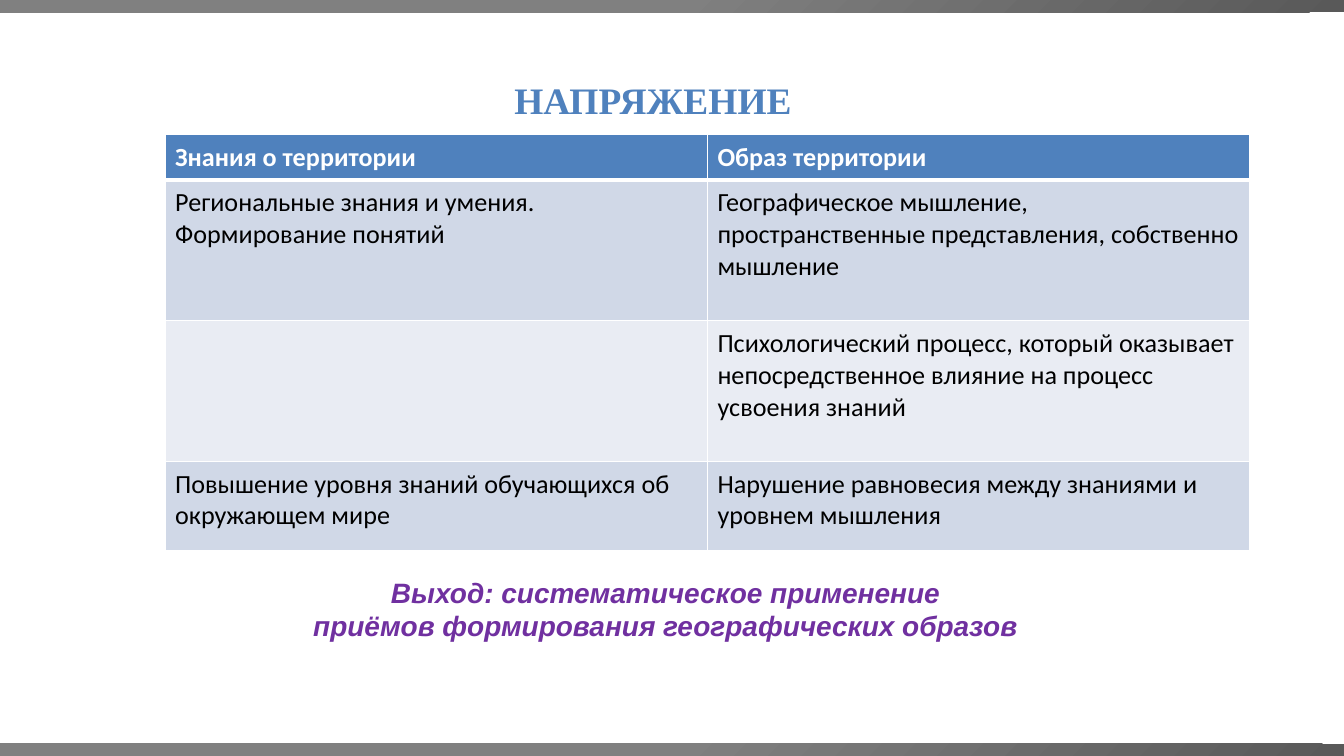
from lxml.etree import SubElement
from pptx import Presentation
from pptx.dml.color import RGBColor
from pptx.enum.shapes import MSO_SHAPE
from pptx.enum.text import MSO_ANCHOR, MSO_AUTO_SIZE, PP_ALIGN
from pptx.oxml.ns import qn
from pptx.util import Cm, Pt

WHITE = RGBColor(0xFF, 0xFF, 0xFF)
BLACK = RGBColor(0x00, 0x00, 0x00)
BLUE = RGBColor(0x4F, 0x81, 0xBD)
PURPLE = RGBColor(0x70, 0x30, 0xA0)
DARK_BAND = RGBColor(0xD0, 0xD8, 0xE7)
LIGHT_BAND = RGBColor(0xE9, 0xEC, 0xF3)
DARK_GREY = RGBColor(0x59, 0x59, 0x59)
GREY = RGBColor(0x80, 0x80, 0x80)

SLIDE_WIDTH, SLIDE_HEIGHT, STRIPE_HEIGHT = 25.4, 14.29, 0.23
THIN, THICK = 0.96, 3

TENSION_ROWS = [
    ("Знания о территории", "Образ территории"),
    ("Региональные знания и умения.\nФормирование понятий",
     "Географическое мышление, пространственные представления, "
     "собственно мышление"),
    ("", "Психологический процесс, который оказывает непосредственное "
     "влияние на процесс усвоения знаний"),
    ("Повышение уровня знаний обучающихся об окружающем мире",
     "Нарушение равновесия между знаниями и уровнем мышления"),
]
ROW_HEIGHTS = [0.79, 2.66, 2.66, 1.68]
ROW_FILLS = [BLUE, DARK_BAND, LIGHT_BAND, DARK_BAND]

HEADING_FONT = {"name": "Times New Roman", "size": Pt(20), "bold": True}
HEADER_FONT = {"name": "Calibri", "size": Pt(14), "bold": True}
BODY_FONT = {"name": "Calibri", "size": Pt(14), "bold": False}
OUTCOME_FONT = {"name": "Arial", "size": Pt(15), "bold": True, "italic": True}
HEADING_FRAME = {"word_wrap": False, "auto_size": MSO_AUTO_SIZE.NONE,
                 "vertical_anchor": MSO_ANCHOR.TOP,
                 "margin_left": Cm(0), "margin_right": Cm(0)}
CELL_MARGINS = {"margin_left": Cm(0.19), "margin_right": Cm(0.19),
                "margin_top": Cm(0.13), "margin_bottom": Cm(0.13)}


def set_attributes(target, values):
    for name, value in values.items():
        setattr(target, name, value)


def write_text(frame, text, font, color, align=PP_ALIGN.LEFT):
    frame.text = text
    for paragraph in frame.paragraphs:
        paragraph.alignment = align
        set_attributes(paragraph.font, font)
        paragraph.font.color.rgb = color


def set_borders(cell, widths):
    properties = cell._tc.get_or_add_tcPr()
    for position, (side, width) in enumerate(widths.items()):
        line = properties.makeelement(qn(f"a:{side}"), {"w": str(Pt(width))})
        fill = SubElement(line, qn("a:solidFill"))
        SubElement(fill, qn("a:srgbClr"), val=str(WHITE))
        properties.insert(position, line)


def add_stripe(slide, left, top, width, height):
    stripe = slide.shapes.add_shape(
        MSO_SHAPE.RECTANGLE, Cm(left), Cm(top), Cm(width), Cm(height))
    stripe.shadow.inherit = False
    stripe.line.fill.background()
    stripe.fill.gradient()
    stripe.fill.gradient_angle = 135
    stops = zip(stripe.fill.gradient_stops, [(0, DARK_GREY), (0.5, GREY)])
    for stop, (position, color) in stops:
        stop.position = position
        stop.color.rgb = color


def place_heading(slide, left, top, width, height):
    heading = slide.shapes.title
    set_attributes(heading, {"left": Cm(left), "top": Cm(top),
                             "width": Cm(width), "height": Cm(height)})
    set_attributes(heading.text_frame, HEADING_FRAME)
    write_text(heading.text_frame, "НАПРЯЖЕНИЕ", HEADING_FONT, BLUE,
               PP_ALIGN.CENTER)


def add_tension_table(slide, left, top, width):
    table = slide.shapes.add_table(
        len(TENSION_ROWS), 2, Cm(left), Cm(top), Cm(width),
        Cm(sum(ROW_HEIGHTS))).table
    for column in table.columns:
        column.width = Cm(width / 2)
    for index, texts in enumerate(TENSION_ROWS):
        table.rows[index].height = Cm(ROW_HEIGHTS[index])
        font, color = (BODY_FONT, BLACK) if index else (HEADER_FONT, WHITE)
        borders = {"lnL": THIN, "lnR": THIN,
                   "lnT": THICK if index == 1 else THIN,
                   "lnB": THICK if index == 0 else THIN}
        for cell, text in zip(table.rows[index].cells, texts):
            set_attributes(cell, CELL_MARGINS)
            cell.fill.solid()
            cell.fill.fore_color.rgb = ROW_FILLS[index]
            set_borders(cell, borders)
            write_text(cell.text_frame, text, font, color)


def add_outcome(slide, left, top, width, height):
    outcome = slide.shapes.add_textbox(
        Cm(left), Cm(top), Cm(width), Cm(height)).text_frame
    outcome.word_wrap = True
    write_text(outcome, "Выход: систематическое применение\n"
               "приёмов формирования географических образов",
               OUTCOME_FONT, PURPLE, PP_ALIGN.CENTER)


def main():
    presentation = Presentation()
    presentation.slide_width = Cm(SLIDE_WIDTH)
    presentation.slide_height = Cm(SLIDE_HEIGHT)
    slide = presentation.slides.add_slide(presentation.slide_layouts[5])
    for top in (SLIDE_HEIGHT - STRIPE_HEIGHT, 0):
        add_stripe(slide, 0, top, SLIDE_WIDTH, STRIPE_HEIGHT)
    place_heading(slide, 9.47, 1.33, 5.74, 1.09)
    add_tension_table(slide, 3.12, 2.54, 20.5)
    add_outcome(slide, 1.62, 10.75, 21.92, 1.52)
    presentation.save("out.pptx")


if __name__ == "__main__":
    main()
